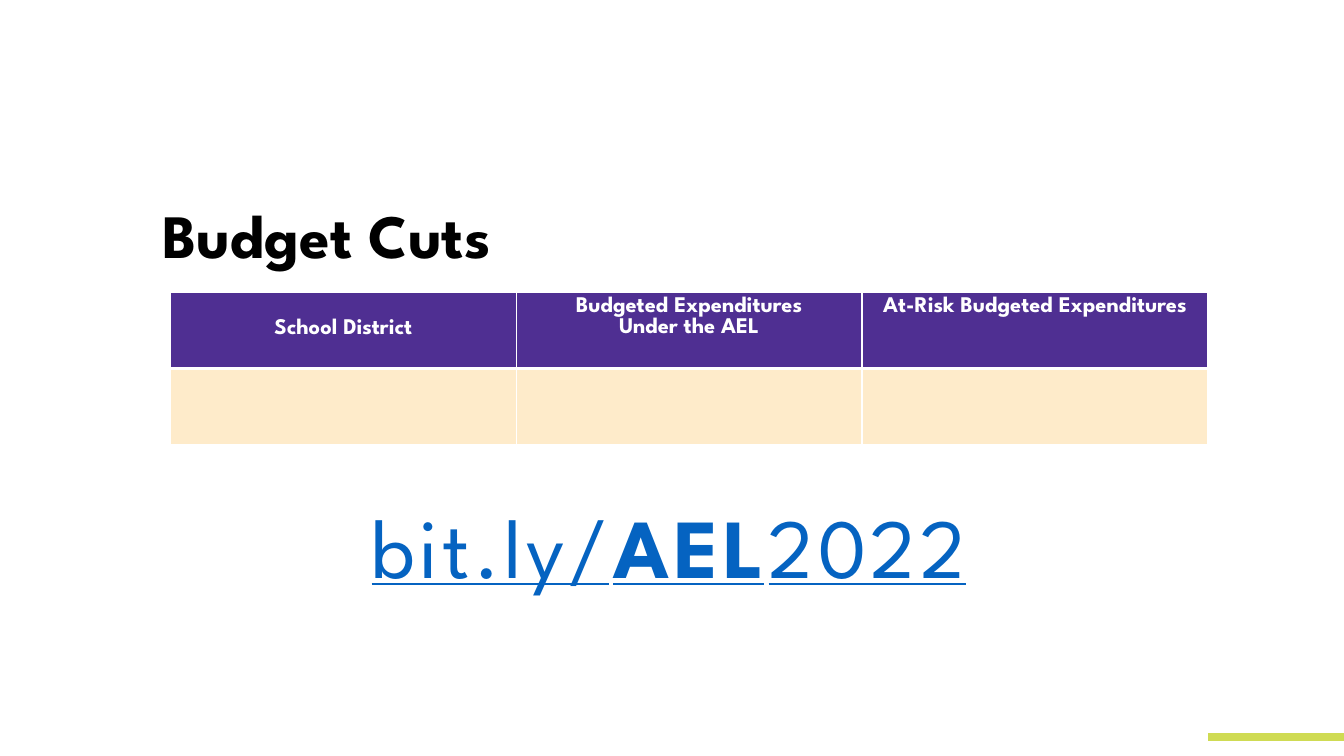
from dataclasses import dataclass

from lxml import etree
from pptx import Presentation
from pptx.dml.color import RGBColor
from pptx.enum.shapes import MSO_CONNECTOR
from pptx.enum.text import MSO_ANCHOR, MSO_AUTO_SIZE, PP_ALIGN
from pptx.oxml import parse_xml
from pptx.oxml.ns import nsdecls, qn
from pptx.util import Inches, Pt

FONT = "League Spartan"
BLACK = RGBColor(0x00, 0x00, 0x00)
WHITE = RGBColor(0xFF, 0xFF, 0xFF)
PURPLE = RGBColor(0x4F, 0x2F, 0x92)
AMBER = RGBColor(0xFD, 0xBF, 0x50)
BLUE = RGBColor(0x05, 0x63, 0xC1)
LIME = RGBColor(0xCF, 0xDB, 0x53)
STRAIGHT = MSO_CONNECTOR.STRAIGHT
CENTER = PP_ALIGN.CENTER
MIDDLE, TOP = MSO_ANCHOR.MIDDLE, MSO_ANCHOR.TOP
NO_FIT = MSO_AUTO_SIZE.NONE


@dataclass
class Head:
    text: str
    inset: float = 0.05


@dataclass
class Part:
    text: str
    bold: bool = False


HEADS = [
    Head("School District", 0.26),
    Head("Budgeted Expenditures\vUnder the AEL"),
    Head("At-Risk Budgeted Expenditures"),
]
PARTS = [Part("bit.ly/"), Part("AEL", True), Part("2022")]


def style(font, size: float, color: RGBColor, bold: bool) -> None:
    font.name = FONT
    font.size = Pt(size)
    font.color.rgb = color
    font.bold = bold


def place(shape, left: float, top: float, width: float, height: float) -> None:
    shape.left, shape.top = Inches(left), Inches(top)
    shape.width, shape.height = Inches(width), Inches(height)


def edge(cell, top: float, bottom: float) -> None:
    props = cell._tc.get_or_add_tcPr()
    sides = [("lnL", 1), ("lnR", 1), ("lnT", top), ("lnB", bottom)]
    for spot, (side, width) in enumerate(sides):
        props.insert(spot, parse_xml(
            f'<a:{side} {nsdecls("a")} w="{Pt(width)}"><a:solidFill>'
            f'<a:srgbClr val="{WHITE}"/></a:solidFill></a:{side}>'))


def paint(cell, color: RGBColor) -> None:
    cell.fill.solid()
    cell.fill.fore_color.rgb = color


def add_title(slide) -> None:
    title = slide.shapes.title
    place(title, 1.51, 1.65, 8.46, 1.44)
    frame = title.text_frame
    frame.text = "Budget Cuts"
    frame.auto_size = NO_FIT
    frame.vertical_anchor = MIDDLE
    para = frame.paragraphs[0]
    para.alignment = PP_ALIGN.LEFT
    para.line_spacing = 0.9
    style(para.runs[0].font, 44, BLACK, True)


def add_link(slide) -> None:
    body = slide.placeholders[1]
    place(body, 1.56, 4.97, 10.4, 1.3)
    frame = body.text_frame
    frame.auto_size = NO_FIT
    frame.vertical_anchor = TOP
    para = frame.paragraphs[0]
    para.alignment = CENTER
    para.line_spacing = 0.9
    para.space_before = Pt(0)
    props = para._p.get_or_add_pPr()
    props.set("marL", "0")
    props.set("indent", "0")
    etree.SubElement(props, qn("a:buNone"))
    for part in PARTS + [Part(" ")]:
        run = para.add_run()
        run.text = part.text
        style(run.font, 60, BLUE, part.bold)
        run.font.underline = part in PARTS
        run._r.get_or_add_rPr().set("spc", "300")


def add_grid(slide) -> None:
    grid = slide.shapes.add_table(
        2, len(HEADS), Inches(1.69), Inches(2.9), Inches(10.29), Inches(1.51)).table
    for col, head in enumerate(HEADS):
        # Header cell
        cell = grid.cell(0, col)
        cell.margin_top = Inches(head.inset)
        cell.text_frame.text = head.text
        para = cell.text_frame.paragraphs[0]
        para.alignment = CENTER
        for run in para.runs:
            style(run.font, 16, WHITE, True)
        paint(cell, PURPLE)
        edge(cell, 1, 3)
        # Empty cell with a pale tint
        cell = grid.cell(1, col)
        paint(cell, AMBER)
        tint = cell._tc.tcPr.find(".//" + qn("a:srgbClr"))
        etree.SubElement(tint, qn("a:alpha"), val="30000")
        edge(cell, 3, 1)


def add_bar(slide) -> None:
    bar = slide.shapes.add_connector(
        STRAIGHT, Inches(13.33), Inches(7.31), Inches(11.98), Inches(7.31))
    bar.line.color.rgb = LIME
    bar.line.width = Pt(6)
    etree.SubElement(bar._element.spPr, qn("a:effectLst"))


def main() -> None:
    deck = Presentation()
    deck.slide_width, deck.slide_height = Inches(13.33), Inches(7.5)
    slide = deck.slides.add_slide(deck.slide_layouts[1])
    add_bar(slide)
    add_title(slide)
    add_link(slide)
    add_grid(slide)
    deck.save("out.pptx")


if __name__ == "__main__":
    main()
